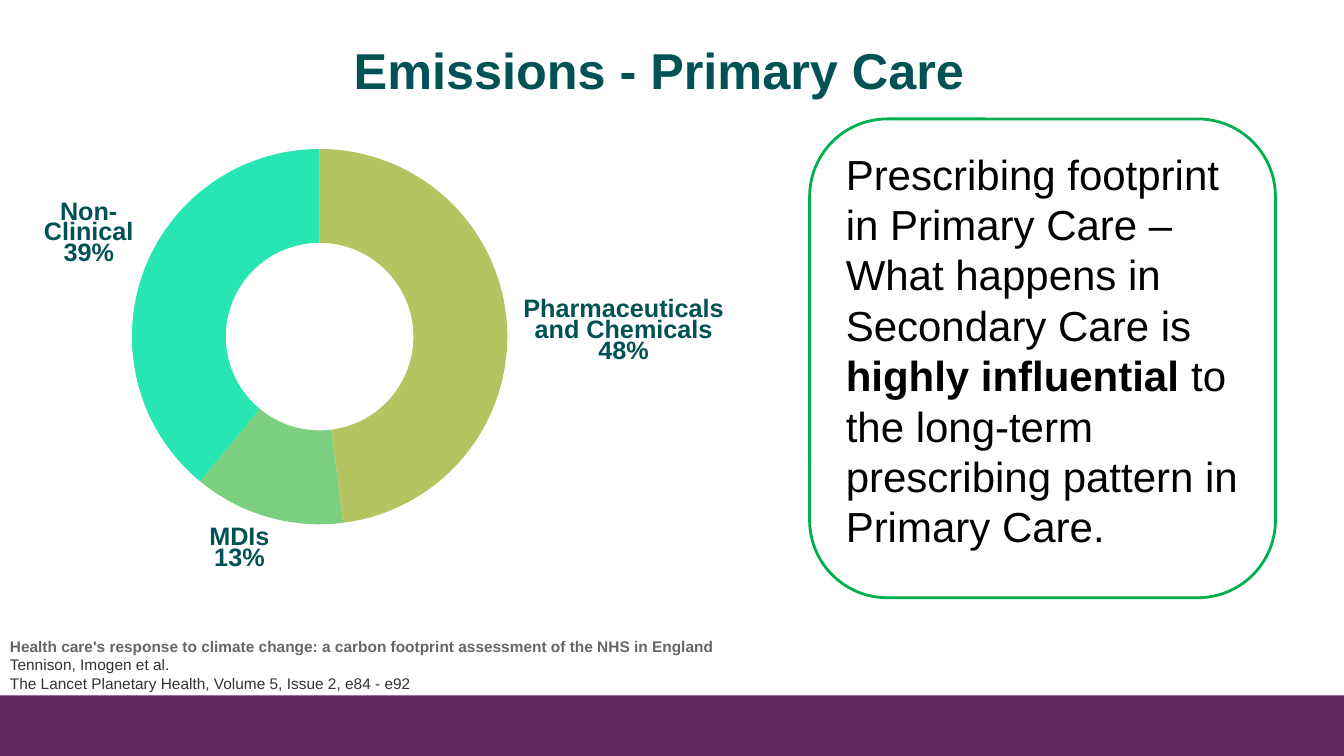
from pptx import Presentation
from pptx.chart.data import CategoryChartData
from pptx.dml.color import RGBColor
from pptx.enum.chart import XL_CHART_TYPE
from pptx.enum.shapes import MSO_SHAPE
from pptx.enum.text import PP_ALIGN
from pptx.oxml import parse_xml
from pptx.oxml.ns import nsdecls
from pptx.util import Inches, Pt

RING = XL_CHART_TYPE.DOUGHNUT
RECT, ROUND = MSO_SHAPE.RECTANGLE, MSO_SHAPE.ROUNDED_RECTANGLE
CENTER = PP_ALIGN.CENTER
FONT = "Arial"
WIDE, HIGH = 13.33, 7.5

HUES = {"teal": "005255", "plum": "5F2861", "edge": "00B050", "white": "FFFFFF",
        "black": "000000", "gray": "666666", "dark": "333333"}

# name, share, slice colour, label box (left, top, width, height)
PARTS = [
    ("Pharmaceuticals and Chemicals", 0.48, "B3C460", (5.14, 3, 2.09, 0.64)),
    ("MDIs", 0.13, "7BCF7E", (2.03, 5.26, 0.69, 0.43)),
    ("Non-Clinical", 0.39, "27E6B2", (0.19, 2.03, 1.38, 0.64)),
]
RING_MID, RING_SIZE = (3.17, 3.34), 3.8

# each paragraph is a list of (text, bold, colour) runs
TITLE = [[("Emissions - Primary Care", True, "teal")]]
SOURCE = [
    [("Health care's response to climate change: a carbon footprint assessment "
      "of the NHS in England", True, "gray")],
    [("Tennison, Imogen et al.", False, "dark")],
    [("The Lancet Planetary Health, Volume 5, Issue 2, e84 - e92", False, "dark")],
]
MESSAGE = [
    [("Prescribing footprint in Primary Care –", False, "black")],
    [("What happens in Secondary Care is ", False, "black"),
     ("highly influential ", True, "black"),
     ("to the long-term prescribing pattern in Primary Care.", False, "black")],
]
TEXTS = [(TITLE, 36, (3.41, 0.34, 6.56, 0.71)),
         (SOURCE, 11, (0, 6.27, 8.66, 1.06)),
         (MESSAGE, 30, (8.29, 1.42, 4.19, 4.61))]


def rgb(code):
    return RGBColor.from_string(code)


def place(box):
    return [Inches(n) for n in box]


def add_box(slide, kind, box, fill, edge=None):
    shape = slide.shapes.add_shape(kind, *place(box))
    shape.shadow.inherit = False
    shape.fill.solid()
    shape.fill.fore_color.rgb = rgb(HUES[fill])
    if edge:
        shape.line.color.rgb = rgb(HUES[edge])
        shape.line.width = Pt(2)
    else:
        shape.line.fill.background()


def add_text(slide, paras, size, box, inset=None, **style):
    """Write runs in a text box; style holds paragraph attributes."""
    frame = slide.shapes.add_textbox(*place(box)).text_frame
    frame.word_wrap = True
    if inset is not None:
        for side in ("left", "top", "right", "bottom"):
            setattr(frame, "margin_" + side, Inches(inset))
    for i, runs in enumerate(paras):
        para = frame.add_paragraph() if i else frame.paragraphs[0]
        for key, value in style.items():
            setattr(para, key, value)
        for text, bold, hue in runs:
            run = para.add_run()
            run.text = text
            for key, value in {"name": FONT, "size": Pt(size), "bold": bold}.items():
                setattr(run.font, key, value)
            run.font.color.rgb = rgb(HUES[hue])


def add_ring(slide):
    data = CategoryChartData(number_format="0%")
    data.categories = [part[0] for part in PARTS]
    data.add_series("Emissions", [part[1] for part in PARTS])
    start = [mid - RING_SIZE / 2 for mid in RING_MID]
    chart = slide.shapes.add_chart(
        RING, *place((*start, RING_SIZE, RING_SIZE)), data).chart
    chart.has_legend = chart.has_title = False
    chart.font.name, chart.font.size = FONT, Pt(18)
    plot = chart.plots[0]
    plot.vary_by_categories = True
    plot.has_data_labels = False
    for i, part in enumerate(PARTS):
        point = plot.series[0].points[i].format
        point.fill.solid()
        point.fill.fore_color.rgb = rgb(part[2])
        point.line.fill.background()

    # let the ring fill its frame
    area = chart._chartSpace.chart.plotArea
    for old in area.findall("{*}layout"):
        area.remove(old)
    marks = [("layoutTarget", "inner"), ("xMode", "edge"), ("yMode", "edge"),
             ("x", 0.01), ("y", 0.01), ("w", 0.98), ("h", 0.98)]
    inner = "".join(f'<c:{tag} val="{val}"/>' for tag, val in marks)
    area.insert(0, parse_xml(f'<c:layout {nsdecls("c")}><c:manualLayout>{inner}'
                             '</c:manualLayout></c:layout>'))
    for hole in area.iter("{*}holeSize"):
        hole.set("val", "50")


def main():
    prs = Presentation()
    prs.slide_width, prs.slide_height = Inches(WIDE), Inches(HIGH)
    slide = prs.slides.add_slide(prs.slide_layouts[6])
    add_box(slide, RECT, (0, 6.9, WIDE, HIGH - 6.9), "plum")
    add_ring(slide)
    for name, share, _, box in PARTS:
        lines = [[(text, True, "teal")] for text in (name, f"{share:.0%}")]
        add_text(slide, lines, 18, box, inset=0, alignment=CENTER,
                 line_spacing=Pt(14.7))
    add_box(slide, ROUND, (8.03, 1.18, 4.62, 4.75), "white", "edge")
    for paras, size, box in TEXTS:
        add_text(slide, paras, size, box)
    prs.save("out.pptx")


if __name__ == "__main__":
    main()
